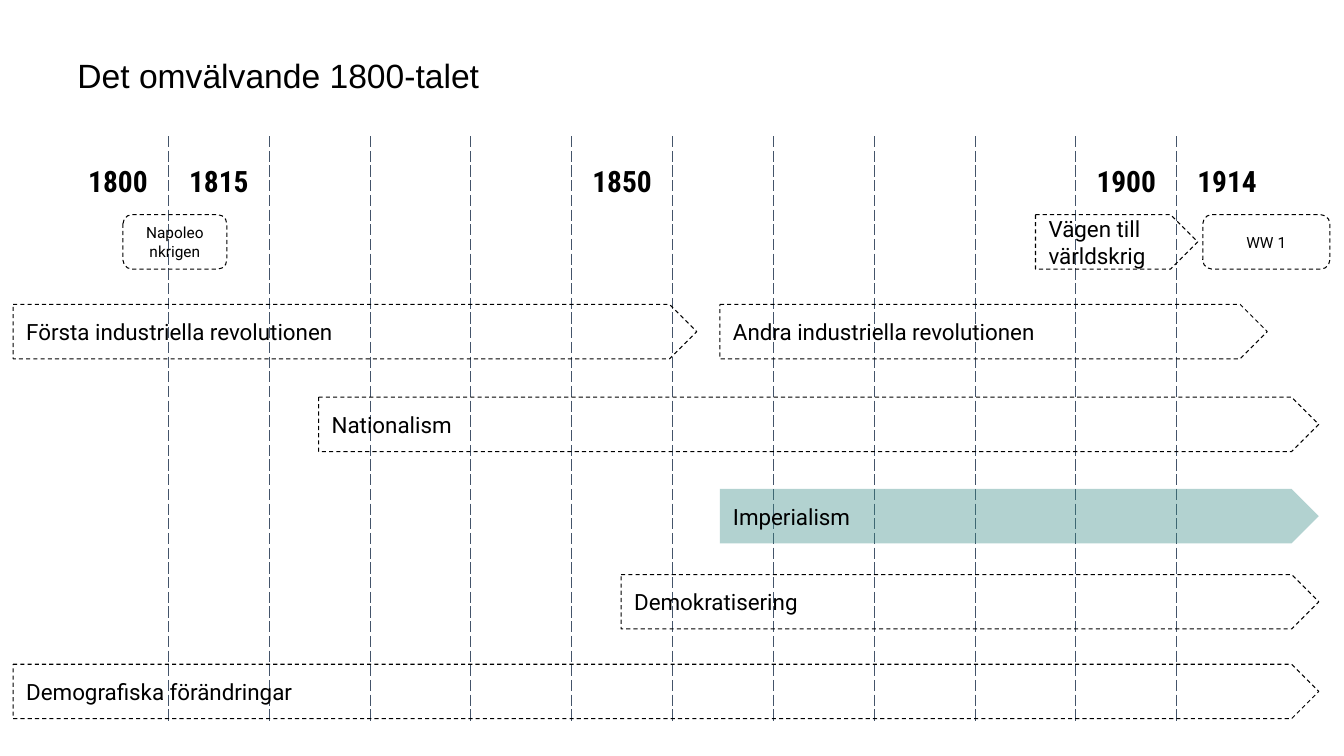
from dataclasses import dataclass

from lxml import etree
from pptx import Presentation
from pptx.dml.color import RGBColor
from pptx.enum.dml import MSO_LINE
from pptx.enum.shapes import MSO_SHAPE
from pptx.enum.text import MSO_ANCHOR, PP_ALIGN
from pptx.oxml.ns import qn
from pptx.util import Inches, Pt

ARROW, ROUNDED = MSO_SHAPE.PENTAGON, MSO_SHAPE.ROUNDED_RECTANGLE
LEFT, CENTER = PP_ALIGN.LEFT, PP_ALIGN.CENTER
MIDDLE, DASH = MSO_ANCHOR.MIDDLE, MSO_LINE.DASH

COLORS = {"text": "000000", "grid": "44546A", "highlight": "358A84"}
HIGHLIGHT_ALPHA = 38000

SLIDE_WIDTH, SLIDE_HEIGHT = 13.33, 7.5
COLUMN = 1
COLUMN_COUNT = 12
GRID_LEFT, GRID_TOP = 0.67, 1.35
GRID_ROWS = (0.92, 4.9)
LANE_TOPS = (2.13, 3.02, 3.94, 4.85, 5.7, 6.59)
LANE_HEIGHT = 0.54
INSET = 0.13
LINE_WIDTH = 0.75
YEARS = {0: "1800", 1: "1815", 5: "1850", 10: "1900", 11: "1914"}


@dataclass(frozen=True)
class Period:
    label: str
    lane: int
    start: float
    end: float
    highlighted: bool = False


@dataclass(frozen=True)
class Event:
    label: str
    lane: int
    start: float
    end: float


PERIODS = (
    Period("Nationalism", 2, 2.49, 12.41),
    Period("Imperialism", 3, 6.47, 12.41, True),
    Period("Andra industriella revolutionen", 1, 6.47, 11.9),
    Period("Demokratisering", 4, 5.49, 12.41),
    Period("Vägen till världskrig", 0, 9.6, 11.21),
    Period("Första industriella revolutionen", 1, -0.54, 6.24),
    Period("Demografiska förändringar", 5, -0.54, 12.41),
)
EVENTS = (
    Event("WW 1", 0, 11.26, 12.52),
    Event("Napoleonkrigen", 0, 0.55, 1.58),
)


def color(name: str) -> RGBColor:
    return RGBColor.from_string(COLORS[name])


def write(frame, text: str, size: float, font: str, align=LEFT, bold=False) -> None:
    frame.text = text
    para = frame.paragraphs[0]
    para.alignment = align
    for span in para.runs:
        span.font.size = Pt(size)
        span.font.name = font
        span.font.bold = bold
        span.font.color.rgb = color("text")


def set_borders(cell, dashed_sides: set) -> None:
    properties = cell._tc.get_or_add_tcPr()
    for index, side in enumerate("LRTB"):
        line = etree.Element(qn(f"a:ln{side}"), w=str(Pt(LINE_WIDTH)))
        if side in dashed_sides:
            fill = etree.SubElement(line, qn("a:solidFill"))
            etree.SubElement(fill, qn("a:srgbClr"), val=COLORS["grid"])
            etree.SubElement(line, qn("a:prstDash"), val="dash")
        else:
            etree.SubElement(line, qn("a:noFill"))
        properties.insert(index, line)


def add_timeline(page) -> None:
    frame = page.shapes.add_table(
        len(GRID_ROWS), COLUMN_COUNT, Inches(GRID_LEFT), Inches(GRID_TOP),
        Inches(COLUMN * COLUMN_COUNT), Inches(sum(GRID_ROWS)))
    table = frame.table
    table.first_row = table.horz_banding = False
    for column in table.columns:
        column.width = Inches(COLUMN)
    for row, height in zip(table.rows, GRID_ROWS):
        row.height = Inches(height)
        for index, cell in enumerate(row.cells):
            cell.fill.background()
            sides = {"L"} if index > 0 else set()
            if index < COLUMN_COUNT - 1:
                sides.add("R")
            set_borders(cell, sides)
    for index, year in YEARS.items():
        cell = table.cell(0, index)
        cell.vertical_anchor = MIDDLE
        cell.margin_left = cell.margin_right = Inches(INSET)
        cell.margin_top = cell.margin_bottom = Inches(INSET)
        write(cell.text_frame, year, 21, "Roboto Condensed", CENTER, True)


def add_box(page, kind, item: Period | Event, side_inset: float):
    box = page.shapes.add_shape(
        kind, Inches(GRID_LEFT + item.start * COLUMN), Inches(LANE_TOPS[item.lane]),
        Inches((item.end - item.start) * COLUMN), Inches(LANE_HEIGHT))
    box.shadow.inherit = False
    box.fill.background()
    box.line.color.rgb = color("text")
    box.line.width = Pt(LINE_WIDTH)
    box.line.dash_style = DASH
    frame = box.text_frame
    frame.word_wrap = True
    frame.vertical_anchor = MIDDLE
    frame.margin_left = frame.margin_right = Inches(side_inset)
    frame.margin_top = frame.margin_bottom = Inches(INSET)
    return box


def add_period(page, period: Period) -> None:
    box = add_box(page, ARROW, period, INSET)
    write(box.text_frame, period.label, 16, "Roboto")
    if period.highlighted:
        box.line.fill.background()
        box.fill.solid()
        box.fill.fore_color.rgb = color("highlight")
        tint = box.element.spPr.find(f"{qn('a:solidFill')}/{qn('a:srgbClr')}")
        etree.SubElement(tint, qn("a:alpha"), val=str(HIGHLIGHT_ALPHA))


def add_event(page, event: Event) -> None:
    box = add_box(page, ROUNDED, event, 0.17)
    write(box.text_frame, event.label, 11, "Roboto", CENTER)


def add_title(page, text: str) -> None:
    box = page.shapes.add_textbox(
        Inches(GRID_LEFT), Inches(0.47), Inches(COLUMN * COLUMN_COUNT), Inches(LANE_HEIGHT))
    box.text_frame.word_wrap = True
    box.text_frame.vertical_anchor = MIDDLE
    write(box.text_frame, text, 24, "Arial")


def main() -> None:
    deck = Presentation()
    deck.slide_width = Inches(SLIDE_WIDTH)
    deck.slide_height = Inches(SLIDE_HEIGHT)
    page = deck.slides.add_slide(deck.slide_layouts[6])
    add_timeline(page)
    add_title(page, "Det omvälvande 1800-talet")
    for period in PERIODS:
        add_period(page, period)
    for event in EVENTS:
        add_event(page, event)
    deck.save("out.pptx")


if __name__ == "__main__":
    main()
